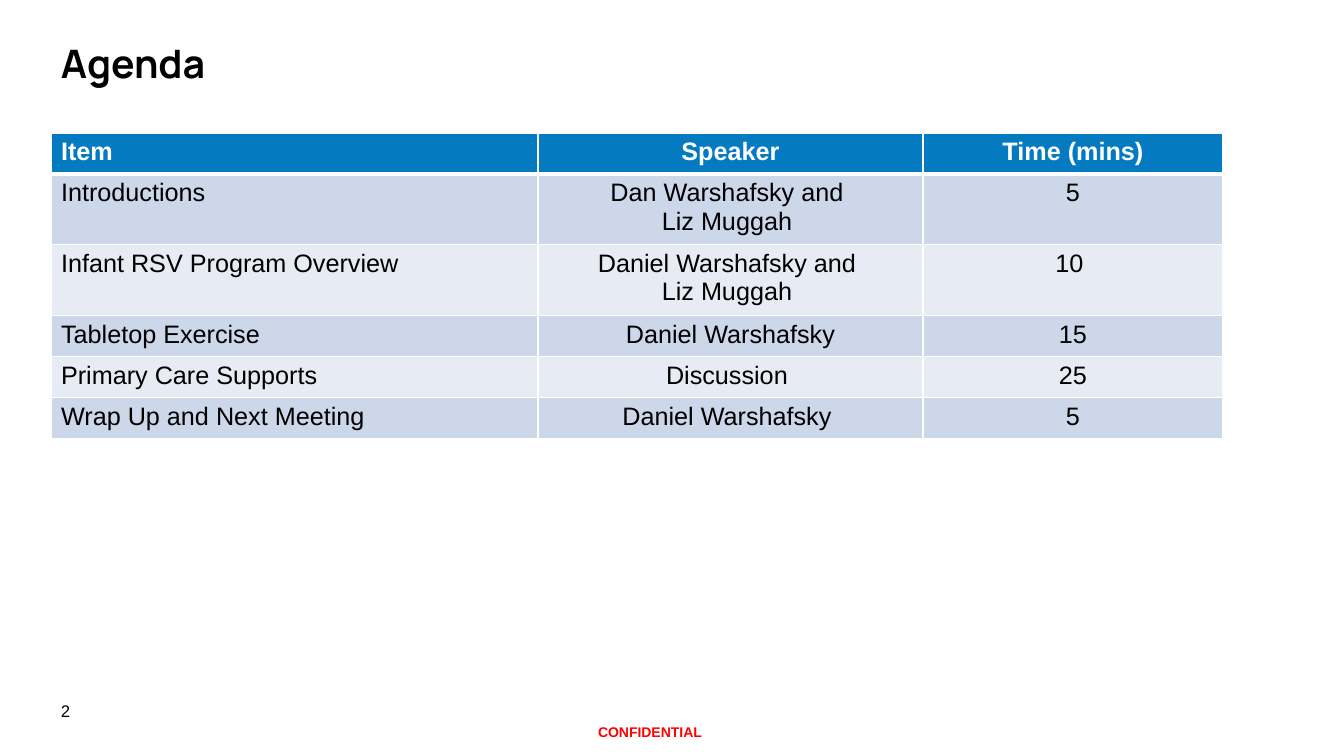
from lxml import etree
from pptx import Presentation
from pptx.dml.color import RGBColor
from pptx.enum.text import MSO_ANCHOR as Anchor, PP_ALIGN as Align
from pptx.oxml import parse_xml
from pptx.oxml.ns import nsdecls
from pptx.util import Emu, Pt

SCALE = 914400 / 100.8
BLACK = RGBColor(0x00, 0x00, 0x00)
WHITE = RGBColor(0xFF, 0xFF, 0xFF)
RED = RGBColor(0xFF, 0x00, 0x00)
BLUE = RGBColor(0x04, 0x7B, 0xC1)
BAND_DARK = RGBColor(0xCC, 0xD7, 0xE9)
BAND_LIGHT = RGBColor(0xE7, 0xEC, 0xF4)

TITLE = {"name": "Manrope", "size": Pt(28), "bold": True}
HEADER = {"name": "Arial", "size": Pt(18), "bold": True}
BODY = {"name": "Arial", "size": Pt(18), "bold": False}
NUMBER = {"name": "Arial", "size": Pt(12), "bold": False}
NOTICE = {"name": "Arial", "size": Pt(10), "bold": True}

COLUMN_WIDTHS = [487, 385, 300]
LINE_HEIGHT = 26
ROW_HEIGHT = 41
AGENDA = [
    ("Item", "Speaker", "Time (mins)"),
    ("Introductions", "Dan Warshafsky and \nLiz Muggah ", "5"),
    ("Infant RSV Program Overview", "Daniel Warshafsky and \nLiz Muggah ", "10 "),
    ("Tabletop Exercise", "Daniel Warshafsky", "15"),
    ("Primary Care Supports", "Discussion ", "25"),
    ("Wrap Up and Next Meeting", "Daniel Warshafsky ", "5"),
]


def px(length):
    return Emu(round(length * SCALE))


def write(frame, text, style, color, align=Align.LEFT, spacing=None):
    frame.text = text
    for para in frame.paragraphs:
        para.alignment = align
        para.line_spacing = spacing
        for span in para.runs:
            for key, value in style.items():
                setattr(span.font, key, value)
            span.font.color.rgb = color


def add_label(page, box, text, style, color, align=Align.LEFT,
              anchor=Anchor.TOP, spacing=None):
    frame = page.shapes.add_textbox(*map(px, box)).text_frame
    frame.word_wrap = True
    frame.vertical_anchor = anchor
    write(frame, text, style, color, align, spacing)
    return frame


def set_borders(cell, widths):
    properties = cell._tc.get_or_add_tcPr()
    for index, (side, width) in enumerate(widths.items()):
        line = parse_xml(f'<a:ln{side} {nsdecls("a")} w="{Pt(width)}"/>')
        fill = etree.SubElement(line, line.tag.replace(f"ln{side}", "solidFill"))
        etree.SubElement(fill, fill.tag.replace("solidFill", "srgbClr"), val=str(WHITE))
        properties.insert(index, line)


def add_agenda(page, left, top):
    heights = [ROW_HEIGHT + LINE_HEIGHT * row[1].count("\n") for row in AGENDA]
    box = left, top, sum(COLUMN_WIDTHS), sum(heights)
    table = page.shapes.add_table(len(AGENDA), len(COLUMN_WIDTHS), *map(px, box)).table
    for column, width in zip(table.columns, COLUMN_WIDTHS):
        column.width = px(width)
    for index, (row, height, texts) in enumerate(zip(table.rows, heights, AGENDA)):
        row.height = px(height)
        header = index == 0
        band = BLUE if header else (BAND_LIGHT, BAND_DARK)[index % 2]
        borders = {"L": 1, "R": 1, "T": 3 if index == 1 else 1, "B": 3 if header else 1}
        for position, (cell, text) in enumerate(zip(row.cells, texts)):
            cell.fill.solid()
            cell.fill.fore_color.rgb = band
            set_borders(cell, borders)
            write(cell.text_frame, text, HEADER if header else BODY,
                  WHITE if header else BLACK,
                  Align.CENTER if position else Align.LEFT)


def add_footer(page, left, top):
    add_label(page, (left, top, 76, 40), "2", NUMBER, BLACK, anchor=Anchor.MIDDLE)
    add_label(page, (left + 387, top + 28, 424, 27), "CONFIDENTIAL", NOTICE, RED,
              Align.CENTER)


def main():
    deck = Presentation()
    deck.slide_width, deck.slide_height = px(1344), px(756)
    page = deck.slides.add_slide(deck.slide_layouts[6])
    add_label(page, (51, 40, 1243, 114), "Agenda", TITLE, BLACK, spacing=0.9)
    add_agenda(page, 51, 133)
    add_footer(page, 51, 691)
    deck.save("out.pptx")


if __name__ == "__main__":
    main()
